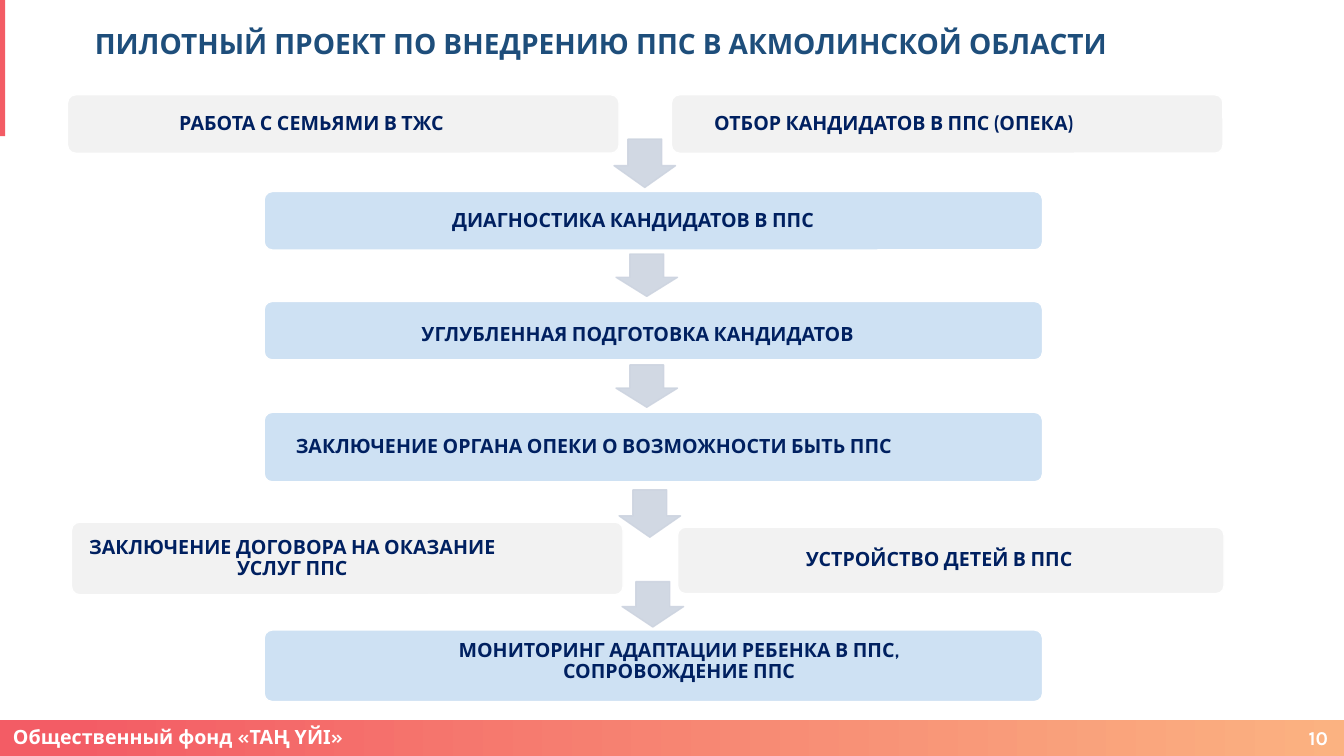
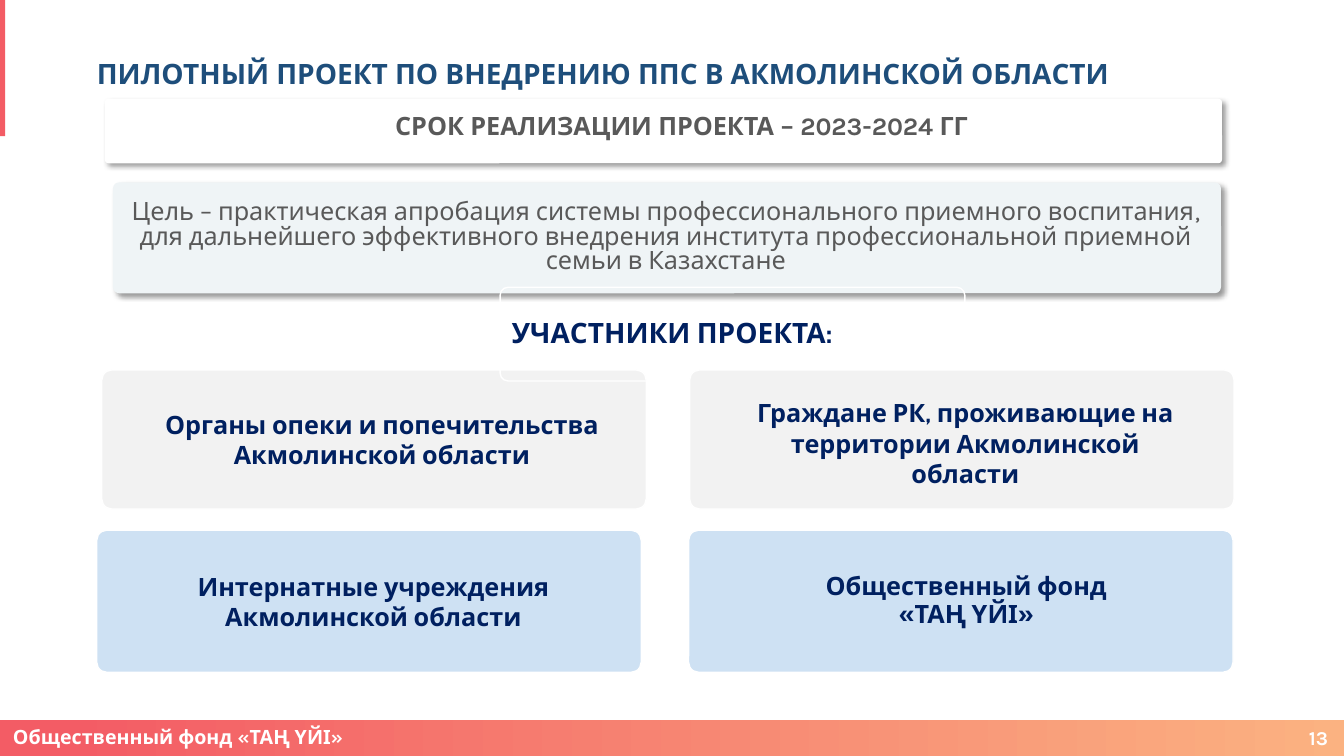
from lxml import etree
from pptx import Presentation
from pptx.dml.color import RGBColor
from pptx.enum.shapes import MSO_SHAPE as Preset
from pptx.enum.text import MSO_ANCHOR as Anchor, PP_ALIGN as Align
from pptx.oxml import parse_xml
from pptx.oxml.ns import qn
from pptx.util import Inches, Pt

color = RGBColor.from_string
NAVY, TITLE_BLUE, TEXT_GRAY, WHITE = "002060", "1E4E7B", "595959", "FFFFFF"
GRAY, LIGHT_BLUE, PALE, ARROW = "F2F2F2", "CEE1F3", "EFF4F6", "CDD4E0"
CORAL, PEACH = "F35C65", "FBB281"
TITLE = "ПИЛОТНЫЙ ПРОЕКТ ПО ВНЕДРЕНИЮ ППС В АКМОЛИНСКОЙ ОБЛАСТИ"
FUND = "«ТАҢ ҮЙІ»"
SHADOW = (
    '<a:effectLst xmlns:a="http://schemas.openxmlformats.org/drawingml/2006/main">'
    '<a:outerShdw blurRad="50800" dist="38100" dir="2700000" algn="tl" rotWithShape="0">'
    '<a:srgbClr val="000000"><a:alpha val="40000"/></a:srgbClr>'
    '</a:outerShdw></a:effectLst>'
)


def write(shape, text, size, ink, font="Karla", bold=True, align=Align.LEFT,
          spacing=1.0, insets=(0.1, 0.05, 0.1, 0.05)):
    frame = shape.text_frame
    frame.text = text
    frame.word_wrap = True
    frame.vertical_anchor = Anchor.MIDDLE
    frame.margin_left, frame.margin_top, frame.margin_right, frame.margin_bottom = map(Inches, insets)
    for paragraph in frame.paragraphs:
        paragraph.alignment = align
        paragraph.line_spacing = spacing
        for run in paragraph.runs:
            run.font.name = font
            run.font.size = Pt(size)
            run.font.bold = bold
            run.font.color.rgb = color(ink)


def add_card(slide, place, fill, radius=0.08, line=WHITE):
    card = slide.shapes.add_shape(Preset.ROUNDED_RECTANGLE, *map(Inches, place))
    card.adjustments[0] = radius / min(place[2:])
    card.shadow.inherit = False
    if fill:
        card.fill.solid()
        card.fill.fore_color.rgb = color(fill)
    else:
        card.fill.background()
    if line:
        card.line.color.rgb = color(line)
        card.line.width = Pt(1)
    else:
        card.line.fill.background()
    return card


prs = Presentation()
prs.slide_width, prs.slide_height = Inches(13.33), Inches(7.5)
layout = prs.slide_layouts[5]
for placeholder in list(layout.placeholders):
    if placeholder.placeholder_format.idx:
        placeholder.element.getparent().remove(placeholder.element)

steps_slide = prs.slides.add_slide(layout)
project_slide = prs.slides.add_slide(layout)

band = steps_slide.shapes.add_shape(Preset.RECTANGLE, 0, Inches(7.14), prs.slide_width, Inches(0.36))
band.fill.gradient()
band.fill.gradient_angle = 0
for stop, position, tint in zip(band.fill.gradient_stops, (0.05, 1), (CORAL, PEACH)):
    stop.position = position
    stop.color.rgb = color(tint)
accent = steps_slide.shapes.add_shape(Preset.RECTANGLE, 0, 0, Inches(0.05), Inches(1.35))
accent.fill.solid()
accent.fill.fore_color.rgb = color(CORAL)
for stripe in (band, accent):
    stripe.line.fill.background()
    stripe.shadow.inherit = False
footer = steps_slide.shapes.add_textbox(*map(Inches, (0.03, 7.22, 9.18, 0.21)))
write(footer, f"Общественный фонд {FUND}", 14, WHITE, spacing=0.9)
for shared in (band, footer, accent):
    layout.shapes.element.append(shared.element)

for slide, number, title_place in (
    (steps_slide, "10", (0.84, 0.07, 10.59, 0.71)),
    (project_slide, "13", (0.86, 0.32, 10.59, 0.82)),
):
    title = slide.shapes.title
    title.left, title.top, title.width, title.height = map(Inches, title_place)
    write(title, TITLE, 20, TITLE_BLUE)
    page_number = slide.shapes.add_textbox(*map(Inches, (12.72, 7.19, 0.55, 0.26)))
    write(page_number, number, 14, WHITE, align=Align.RIGHT)

steps = [
    ("РАБОТА С СЕМЬЯМИ В ТЖС", (0.67, 0.94, 5.47, 0.58), GRAY, (0.08, 0.04, 0.71, 0.04), Align.CENTER),
    ("ОТБОР КАНДИДАТОВ В ППС (ОПЕКА)", (6.66, 0.94, 5.47, 0.58), GRAY, (0.09, 0.04, 1.15, 0.04), Align.CENTER),
    ("ДИАГНОСТИКА КАНДИДАТОВ В ППС", (2.62, 1.9, 7.72, 0.58), LIGHT_BLUE, (0.08, 0.04, 0.48, 0.04), Align.CENTER),
    ("УГЛУБЛЕННАЯ ПОДГОТОВКА КАНДИДАТОВ", (2.62, 2.99, 7.72, 0.58), LIGHT_BLUE, (0.08, 0.13, 0.39, 0.04), Align.CENTER),
    ("ЗАКЛЮЧЕНИЕ ОРГАНА ОПЕКИ О ВОЗМОЖНОСТИ БЫТЬ ППС", (2.62, 4.09, 7.72, 0.69), LIGHT_BLUE,
     (0.29, 0.09, 1.18, 0.09), Align.LEFT),
    ("ЗАКЛЮЧЕНИЕ ДОГОВОРА НА ОКАЗАНИЕ УСЛУГ ППС", (0.71, 5.18, 5.47, 0.72), GRAY,
     (0.09, 0.09, 1.18, 0.09), Align.CENTER),
    ("УСТРОЙСТВО ДЕТЕЙ В ППС", (6.72, 5.23, 5.42, 0.66), GRAY, (0.09, 0.09, 0.32, 0.09), Align.CENTER),
    ("МОНИТОРИНГ АДАПТАЦИИ РЕБЕНКА В ППС, СОПРОВОЖДЕНИЕ ППС", (2.62, 6.25, 7.72, 0.71), LIGHT_BLUE,
     (1.02, 0.04, 0.51, 0.12), Align.CENTER),
]
for text, place, fill, insets, align in steps:
    step = add_card(steps_slide, place, fill)
    write(step, text, 14, NAVY, "Cabin", align=align, spacing=0.9, insets=insets)

for left, top, height in (
    (6.09, 1.38, 0.48), (6.11, 2.52, 0.42), (6.11, 3.62, 0.42), (6.14, 4.86, 0.47), (6.17, 5.77, 0.45),
):
    arrow = steps_slide.shapes.add_shape(Preset.DOWN_ARROW, *map(Inches, (left, top, 0.61, height)))
    arrow.adjustments[0], arrow.adjustments[1] = 0.55, 0.45
    arrow.shadow.inherit = False
    arrow.fill.solid()
    arrow.fill.fore_color.rgb = color(ARROW)
    arrow.line.color.rgb = color(ARROW)
    arrow.line.width = Pt(1)
    for tint in arrow.element.spPr.iter(qn("a:srgbClr")):
        etree.SubElement(tint, qn("a:alpha")).set("val", "90000")

statements = [
    ("СРОК РЕАЛИЗАЦИИ ПРОЕКТА – 2023-2024 ГГ", (1.04, 0.98, 11.08, 0.64), WHITE, True, (0.38, 0, 0.02, 0.05)),
    ("Цель – практическая апробация системы профессионального приемного воспитания, "
     "для дальнейшего эффективного внедрения института профессиональной приемной семьи в Казахстане",
     (1.12, 1.81, 10.99, 1.1), PALE, False, (0.02, 0.05, 0.04, 0.05)),
]
for text, place, fill, bold, insets in statements:
    statement = add_card(project_slide, place, fill, 0.056 * place[3], line=None)
    properties = statement.element.spPr
    properties.replace(properties.find(qn("a:effectLst")), parse_xml(SHADOW))
    write(statement, text, 18, TEXT_GRAY, bold=bold, align=Align.CENTER, spacing=0.8, insets=insets)

participants = [
    ("Органы опеки и попечительства Акмолинской области", (1.01, 3.67, 5.4, 1.38), GRAY, 1.0,
     (0.53, 0.04, 0.37, 0.04)),
    ("Интернатные учреждения Акмолинской области", (0.96, 5.26, 5.4, 1.41), LIGHT_BLUE, 1.0,
     (0.5, 0.04, 0.41, 0.04)),
    (f"Общественный фонд\n{FUND}", (6.83, 5.26, 5.4, 1.41), LIGHT_BLUE, 0.9, (0.49, 0.04, 0.38, 0.04)),
    ("Граждане РК, проживающие на территории Акмолинской области", (6.84, 3.67, 5.4, 1.38), GRAY, 1.0,
     (0.5, 0.11, 0.43, 0.04)),
]
for text, place, fill, spacing, insets in participants:
    participant = add_card(project_slide, place, fill, 0.1)
    write(participant, text, 18, NAVY, "Cabin", align=Align.CENTER, spacing=spacing, insets=insets)

heading = add_card(project_slide, (4.96, 2.85, 4.61, 0.93), None)
write(heading, "УЧАСТНИКИ ПРОЕКТА:", 20, NAVY, "Cabin", spacing=0.9, insets=(0.09, 0.09, 1.15, 0.09))
project_slide.shapes.element.insert(
    project_slide.shapes.element.index(participant.element), heading.element)

prs.save("out.pptx")
